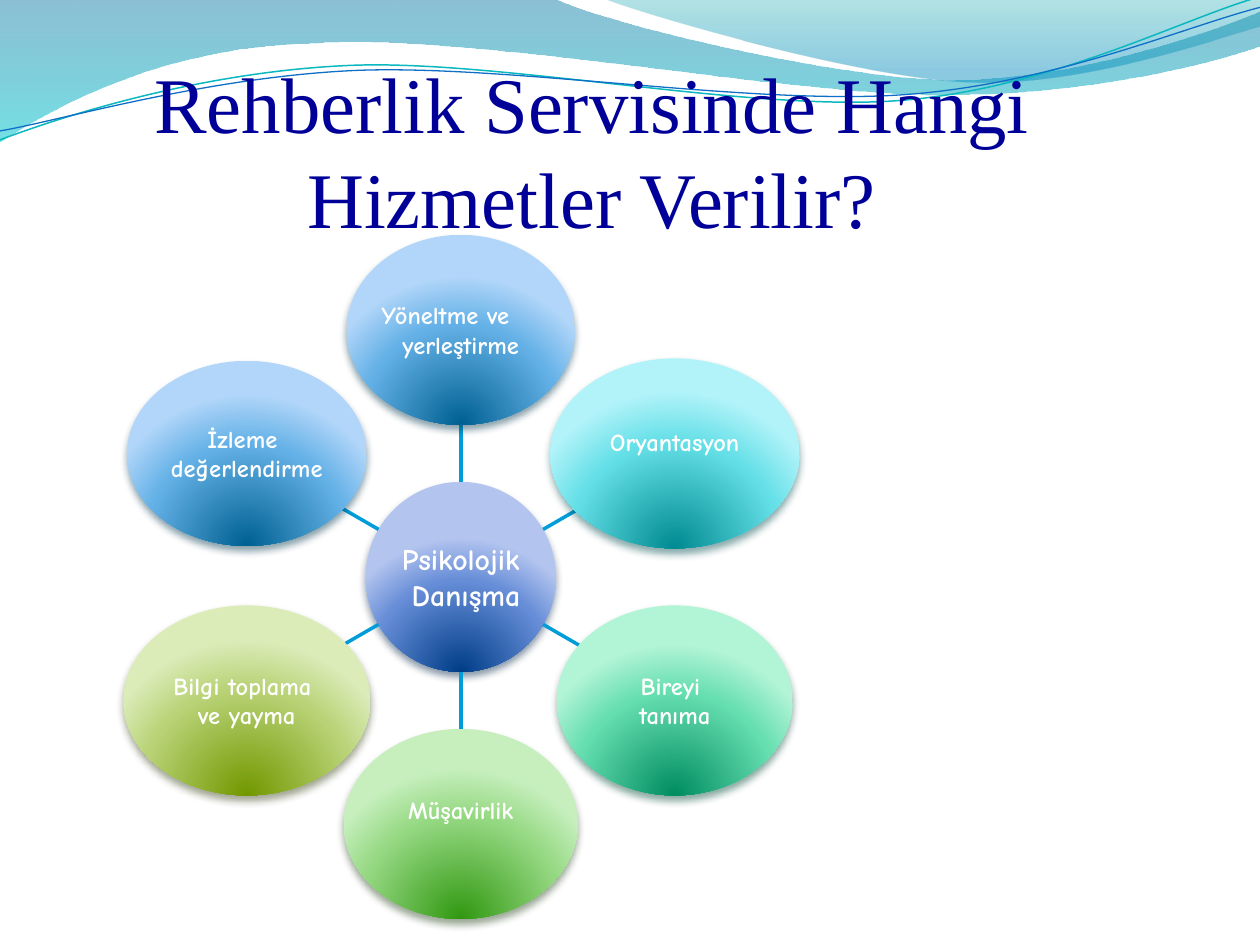
from math import cos, hypot, radians, sin

from lxml import etree
from pptx import Presentation
from pptx.dml.color import RGBColor
from pptx.enum import shapes, text
from pptx.oxml import ns
from pptx.util import Cm, Pt

CENTRE_X, CENTRE_Y = 9.29, 11.63
ORBIT = 4.98
HUB_SIZE = 3.83

# Gradient stops from dark to light, then the shadow colour
BLUE = ("006091", "64B1E7", "B1D6F9", "00374C")
TURQUOISE = ("008A91", "64DFE7", "B1F3F9", "024B4E")
MINT = ("008C60", "65DEB0", "B2F4D6", "044A37")
GREEN = ("319811", "95D882", "C6EFBD", "2B4821")
OLIVE = ("729800", "B8D275", "DBECB9", "3A4519")
NAVY = ("003D87", "668DD7", "B3C4EF", "042747")

# Services clockwise from the top: lines, width, height, colours, bottom inset
SERVICES = [
    (["Yöneltme ve", "yerleştirme"], 4.6, 3.83, BLUE, 0.03),
    (["Oryantasyon"], 5.03, 3.83, TURQUOISE, 0.5),
    (["Bireyi ", "tanıma"], 4.75, 3.83, MINT, 0.03),
    (["Müşavirlik"], 4.72, 3.83, GREEN, 0.62),
    (["Bilgi toplama ", "ve yayma"], 4.98, 3.83, OLIVE, 0.03),
    (["İzleme ", "değerlendirme"], 4.83, 3.73, BLUE, 0.03),
]

# Wave outlines in cm: two numbers are a line, six are a Bézier curve
LEFT_WAVE = [
    (0, 0), (11.18, -0.03), (12.09, 0.43, 16.87, 1.6, 19.25, 1.6),
    (21.67, 1.6, 24.33, 0.66, 25.4, 0.23), (25.43, 0.91),
    (24.97, 1.12, 22.1, 1.93, 18.95, 1.91), (15.8, 1.91, 9.7, 0.71, 6.53, 0.86),
    (3.28, 0.91, 1.17, 2.11, -0.03, 2.87),
]
RIGHT_WAVE = [
    (12.17, -0.03), (12.93, 0.28, 17.32, 1.57, 19.53, 1.65),
    (21.74, 1.75, 24.41, 0.81, 25.4, 0.53), (25.4, 0),
]
TEAL_CURVE = [
    (0, 2.82), (1.22, 2.36, 4.01, 1.45, 7.04, 1.32),
    (10.03, 1.19, 15.06, 2.26, 18.11, 2.03), (21.16, 1.8, 23.83, 0.38, 25.35, -0.05),
]
BLUE_CURVE = [
    (0, 2.64), (1.19, 2.44, 4.17, 1.55, 7.19, 1.42),
    (10.24, 1.3, 15.16, 2.13, 18.21, 1.91), (21.23, 1.7, 23.9, 0.53, 25.4, 0.15),
]


def rgb(value):
    return RGBColor.from_string(value)


def add_xml(parent, tag, **attributes):
    return etree.SubElement(parent, ns.qn(tag), attributes)


def add_colour(parent, value, opacity=100):
    colour = add_xml(parent, "a:srgbClr", val=value)
    if opacity < 100:
        add_xml(colour, "a:alpha", val=str(opacity * 1000))


def set_gradient(sp, stops, radial=False):
    """Fill with (position, colour, opacity) stops, downwards or from below."""
    sp.fill.solid()
    solid = sp._element.spPr.find(ns.qn("a:solidFill"))
    grad = etree.Element(ns.qn("a:gradFill"), rotWithShape="1")
    stop_list = add_xml(grad, "a:gsLst")
    for position, colour, opacity in stops:
        add_colour(add_xml(stop_list, "a:gs", pos=str(position * 1000)), colour, opacity)
    if radial:
        path = add_xml(grad, "a:path", path="circle")
        add_xml(path, "a:fillToRect", l="50000", t="130000", r="50000", b="-30000")
    else:
        add_xml(grad, "a:lin", ang="5400000", scaled="1")
    solid.getparent().replace(solid, grad)


def set_shadow(sp, colour):
    sp.shadow.inherit = False
    effects = sp._element.spPr.find(ns.qn("a:effectLst"))
    shadow = add_xml(effects, "a:outerShdw", blurRad=str(Pt(4.5)), dist=str(Pt(3)),
                     dir="5400000", rotWithShape="0")
    add_colour(shadow, colour, 48)


def add_outline(s, outline, close):
    """Build through all points, then merge each curve's three lines into a Bézier."""
    points = [(Cm(part[i]), Cm(part[i + 1]))
              for part in outline for i in range(0, len(part), 2)]
    builder = s.shapes.build_freeform(*points[0])
    builder.add_line_segments(points[1:], close=close)
    sp = builder.convert_to_shape()
    sp.shadow.inherit = False
    lines = iter(list(sp._element.spPr.iter(ns.qn("a:lnTo"))))
    for part in outline[1:]:
        line = next(lines)
        if len(part) == 6:
            line.addprevious(curve := etree.Element(ns.qn("a:cubicBezTo")))
            for old in (line, next(lines), next(lines)):
                curve.append(old[0])
                old.getparent().remove(old)
    return sp


def add_wave(s, outline, stops):
    sp = add_outline(s, outline, True)
    set_gradient(sp, stops)
    sp.line.fill.background()


def add_curve(s, outline, colour, width):
    sp = add_outline(s, outline, False)
    sp.fill.background()
    sp.line.color.rgb = rgb(colour)
    sp.line.width = Pt(width)


def set_text(sp, lines, font, size, colour, bold=False):
    tf = sp.text_frame
    tf.word_wrap = True
    tf.text = "\n".join(lines)
    for p in tf.paragraphs:
        p.alignment = text.PP_ALIGN.CENTER
        for r in p.runs:
            r.font.name, r.font.size, r.font.bold = font, Pt(size), bold
            r.font.color.rgb = rgb(colour)
    return tf


def add_title(s, title):
    sp = s.shapes.add_textbox(Cm(0.5), Cm(1.52), Cm(22.86), Cm(3.4))
    tf = set_text(sp, [title], "Times New Roman", 45, "000099")
    tf.vertical_anchor = text.MSO_ANCHOR.BOTTOM
    tf.margin_left = tf.margin_right = tf.margin_bottom = 0


def add_bubble(s, lines, x, y, width, height, colours, size, bottom=0.03):
    """Draw a shaded ellipse centred on x, y."""
    sp = s.shapes.add_shape(shapes.MSO_SHAPE.OVAL, Cm(x - width / 2),
                            Cm(y - height / 2), Cm(width), Cm(height))
    set_gradient(sp, zip((0, 68, 100), colours[:3], (100,) * 3), radial=True)
    sp.line.fill.background()
    set_shadow(sp, colours[3])
    tf = set_text(sp, lines, "Comic Neue", size, "FFFFFF", True)
    tf.vertical_anchor = text.MSO_ANCHOR.MIDDLE
    tf.margin_left = tf.margin_right = tf.margin_top = Cm(0.03)
    tf.margin_bottom = Cm(bottom)
    return tf


def add_spoke(s, dx, dy, width, height):
    """Join the hub's edge to the edge of the bubble in direction dx, dy."""
    start = HUB_SIZE / 2
    end = ORBIT - 1 / hypot(2 * dx / width, 2 * dy / height)
    ends = [Cm(v) for d in (start, end) for v in (CENTRE_X + d * dx, CENTRE_Y + d * dy)]
    line = s.shapes.add_connector(shapes.MSO_CONNECTOR.STRAIGHT, *ends)
    line.line.color.rgb = rgb("009DD9")
    line.line.width = Pt(2)
    add_xml(line._element.spPr, "a:effectLst")


def add_services(s):
    add_bubble(s, ["Psikolojik", " Danışma"], CENTRE_X, CENTRE_Y,
               HUB_SIZE, HUB_SIZE, NAVY, 17)
    for i, (lines, width, height, colours, bottom) in enumerate(SERVICES):
        angle = radians(360 / len(SERVICES) * i - 90)
        dx, dy = cos(angle), sin(angle)
        add_spoke(s, dx, dy, width, height)
        tf = add_bubble(s, lines, CENTRE_X + ORBIT * dx, CENTRE_Y + ORBIT * dy,
                        width, height, colours, 14, bottom)
        if i == 0:
            tf.paragraphs[0].alignment = text.PP_ALIGN.LEFT


def main():
    prs = Presentation()
    prs.slide_width, prs.slide_height = Cm(25.4), Cm(19.05)
    s = prs.slides.add_slide(prs.slide_layouts[6])
    add_wave(s, LEFT_WAVE, [(0, "0074A1", 45), (100, "00C6CF", 55)])
    add_wave(s, RIGHT_WAVE, [(0, "00A1A9", 30), (80, "008BBF", 45)])
    add_curve(s, TEAL_CURVE, "0AB8BF", 0.85)
    add_curve(s, BLUE_CURVE, "0F6FC6", 0.75)
    add_title(s, "Rehberlik Servisinde Hangi Hizmetler Verilir?")
    add_services(s)
    prs.save("out.pptx")


if __name__ == "__main__":
    main()
